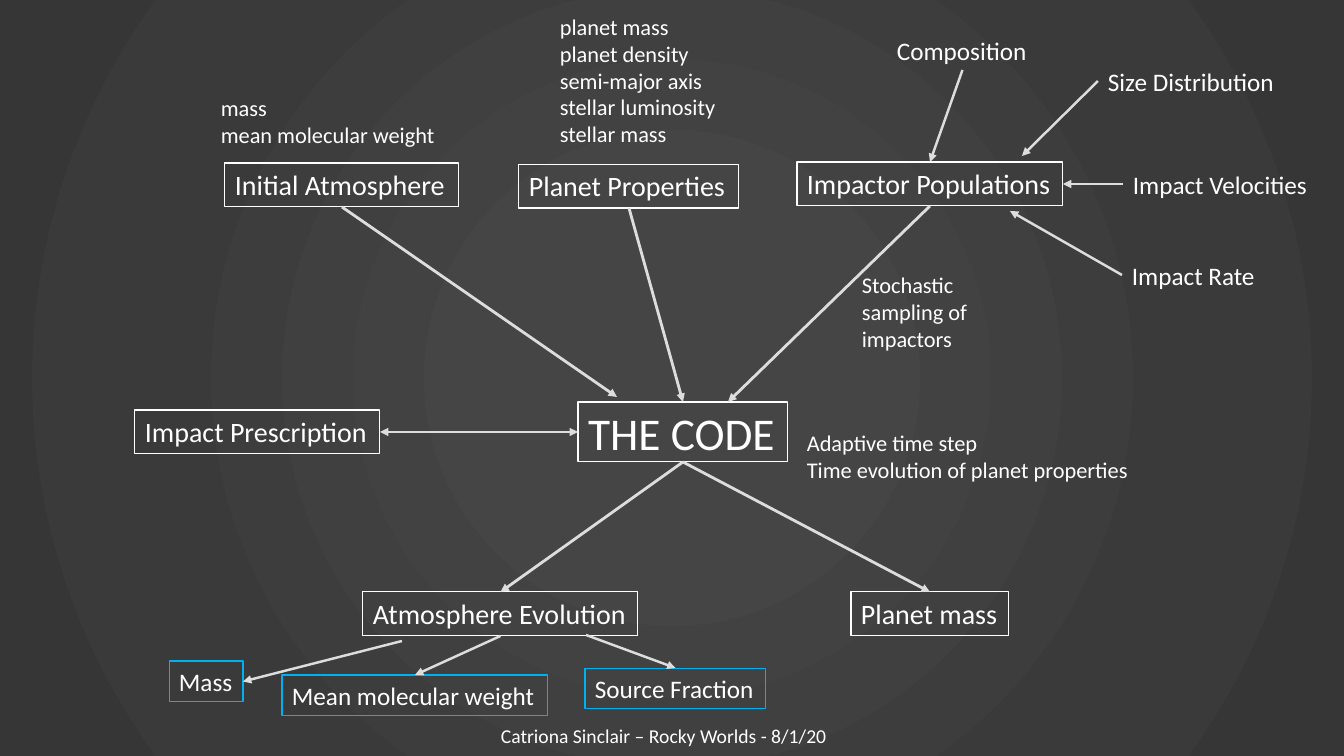
from lxml.etree import SubElement
from pptx import Presentation
from pptx.dml.color import RGBColor
from pptx.enum.shapes import MSO_CONNECTOR as Connector
from pptx.enum.text import MSO_ANCHOR as Anchor, MSO_AUTO_SIZE as AutoSize, PP_ALIGN as Align
from pptx.oxml import parse_xml
from pptx.oxml.ns import nsdecls, qn
from pptx.util import Emu, Pt

SCALE = 12192000 / 1344
WHITE, BLUE, ARROW = "FFFFFF", "00B0F0", "DDDDDD"
TOP, LEFT, BOTTOM, RIGHT = range(4)
GRADIENT = [(0, "454545"), (23, "454545"), (69, "3A3A3A"), (97, "363636")]


def px(length):
    """Turn pixels into EMU."""
    return Emu(round(length * SCALE))


def color(value):
    """Turn a hex string into a colour."""
    return RGBColor.from_string(value)


def shift(origin, x, y):
    """Give the point at an offset from an origin."""
    return origin[0] + x, origin[1] + y


def paint_background(page):
    """Fill the page with a radial gradient."""
    stops = "".join(
        f'<a:gs pos="{place * 1000}"><a:srgbClr val="{shade}"/></a:gs>' for place, shade in GRADIENT
    )
    background = parse_xml(
        f'<p:bg {nsdecls("p", "a")}><p:bgPr><a:gradFill rotWithShape="1">'
        f'<a:gsLst>{stops}</a:gsLst><a:path path="circle">'
        '<a:fillToRect l="50000" t="50000" r="50000" b="50000"/></a:path>'
        "</a:gradFill><a:effectLst/></p:bgPr></p:bg>"
    )
    page.element.cSld.insert(0, background)


def format_box(box, text, size, outline=None, wrap=False, anchor=Anchor.TOP):
    """Write left-aligned white text in a box and outline it if asked."""
    frame = box.text_frame
    frame.text = text
    frame.word_wrap = wrap
    frame.auto_size = AutoSize.NONE
    frame.vertical_anchor = anchor
    for para in frame.paragraphs:
        para.alignment = Align.LEFT
        for span in para.runs:
            span.font.name = "Calibri"
            span.font.size = Pt(size)
            span.font.color.rgb = color(WHITE)
    if outline:
        box.line.color.rgb = color(outline)
        box.line.width = Pt(0.75)


def add_label(page, corner, width, height, text, size, **style):
    """Add a text box and return it."""
    box = page.shapes.add_textbox(*map(px, (*corner, width, height)))
    format_box(box, text, size, **style)
    return box


def add_node(page, corner, width, text):
    """Add a main box of the diagram."""
    return add_label(page, corner, width, 44, text, 20, outline=WHITE)


def add_arrow(page, start, end, width=2, both=False):
    """Draw an arrow between two ends, each a point or a shape with its side."""
    points = [(0, 0) if hasattr(tip[0], "shape_id") else tip for tip in (start, end)]
    arrow = page.shapes.add_connector(Connector.STRAIGHT, *map(px, points[0] + points[1]))
    if hasattr(start[0], "shape_id"):
        arrow.begin_connect(*start)
    if hasattr(end[0], "shape_id"):
        arrow.end_connect(*end)
    arrow.line.color.rgb = color(ARROW)
    arrow.line.width = Pt(width)
    line = arrow.line._get_or_add_ln()
    for tag in ("a:headEnd", "a:tailEnd") if both else ("a:tailEnd",):
        SubElement(line, qn(tag), type="triangle")
    SubElement(arrow.element.spPr, qn("a:effectLst"))


def draw_core(page, origin):
    """Draw the code, its prescription and its note; return the code box."""
    code = page.shapes.title
    code.left, code.top = map(px, shift(origin, 443, 0))
    code.width, code.height = px(210), px(60)
    format_box(code, "THE CODE", 32.4, outline=WHITE, wrap=True, anchor=Anchor.MIDDLE)
    prescription = add_node(page, shift(origin, 0, 8), 245, "Impact Prescription")
    add_arrow(page, (prescription, RIGHT), (code, LEFT), both=True)
    add_label(page, shift(origin, 662, 22), 352, 65,
              "Adaptive time step\nTime evolution of planet properties", 16, wrap=True)
    return code


def draw_inputs(page, origin, code):
    """Draw the atmosphere and planet inputs with their lists."""
    atmosphere = add_node(page, shift(origin, 14, 155), 234, "Initial Atmosphere")
    planet = add_node(page, shift(origin, 308, 156), 220, "Planet Properties")
    add_label(page, shift(origin, 0, 81), 237, 65, "mass\nmean molecular weight", 16)
    add_label(page, shift(origin, 339, 0), 177, 146,
              "planet mass\nplanet density\nsemi-major axis\nstellar luminosity\nstellar mass", 16)
    add_arrow(page, (atmosphere, BOTTOM), shift(origin, 406, 389))
    add_arrow(page, (planet, BOTTOM), (code, TOP))


def draw_impactors(page, origin):
    """Draw the impactor populations and what feeds them."""
    impactors = add_node(page, shift(origin, 0, 132), 266, "Impactor Populations")
    feeds = [
        ("Composition", 90, 0, 151, BOTTOM, (impactors, TOP)),
        ("Size Distribution", 301, 31, 188, LEFT, shift(origin, 225, 126)),
        ("Impact Velocities", 326, 134, 197, LEFT, (impactors, RIGHT)),
        ("Impact Rate", 325, 225, 144, LEFT, shift(origin, 213, 181)),
    ]
    for text, x, y, width, side, target in feeds:
        feed = add_label(page, shift(origin, x, y), width, 40, text, 18)
        add_arrow(page, (feed, side), target, 1.75)
    add_arrow(page, (impactors, BOTTOM), shift(origin, -69, 372))
    add_label(page, shift(origin, 55, 236), 135, 92,
              "Stochastic sampling of impactors", 16, wrap=True)


def draw_outputs(page, origin, code):
    """Draw the results of the code and the parts of the atmosphere."""
    evolution = add_node(page, shift(origin, 194, 0), 275, "Atmosphere Evolution")
    planet_mass = add_node(page, shift(origin, 682, 0), 158, "Planet mass")
    for result in (evolution, planet_mass):
        add_arrow(page, (code, BOTTOM), (result, TOP))
    parts = [
        ("Mass", 0, 69, 74, shift(origin, 233, 49), RIGHT),
        ("Mean molecular weight", 113, 83, 266, (evolution, BOTTOM), TOP),
        ("Source Fraction", 416, 76, 181, shift(origin, 417, 43), TOP),
    ]
    for text, x, y, width, start, side in parts:
        part = add_label(page, shift(origin, x, y), width, 41, text, 18, outline=BLUE)
        add_arrow(page, start, (part, side), 1.75)


def main():
    """Build the slide and save it."""
    deck = Presentation()
    deck.slide_width, deck.slide_height = px(1344), px(756)
    page = deck.slides.add_slide(deck.slide_layouts[5])
    paint_background(page)
    code = draw_core(page, (135, 402))
    draw_inputs(page, (211, 8), code)
    draw_impactors(page, (797, 30))
    draw_outputs(page, (169, 592), code)
    add_label(page, (491, 715), 362, 41, "Catriona Sinclair – Rocky Worlds - 8/1/20", 14,
              wrap=True, anchor=Anchor.MIDDLE)
    deck.save("out.pptx")


if __name__ == "__main__":
    main()
